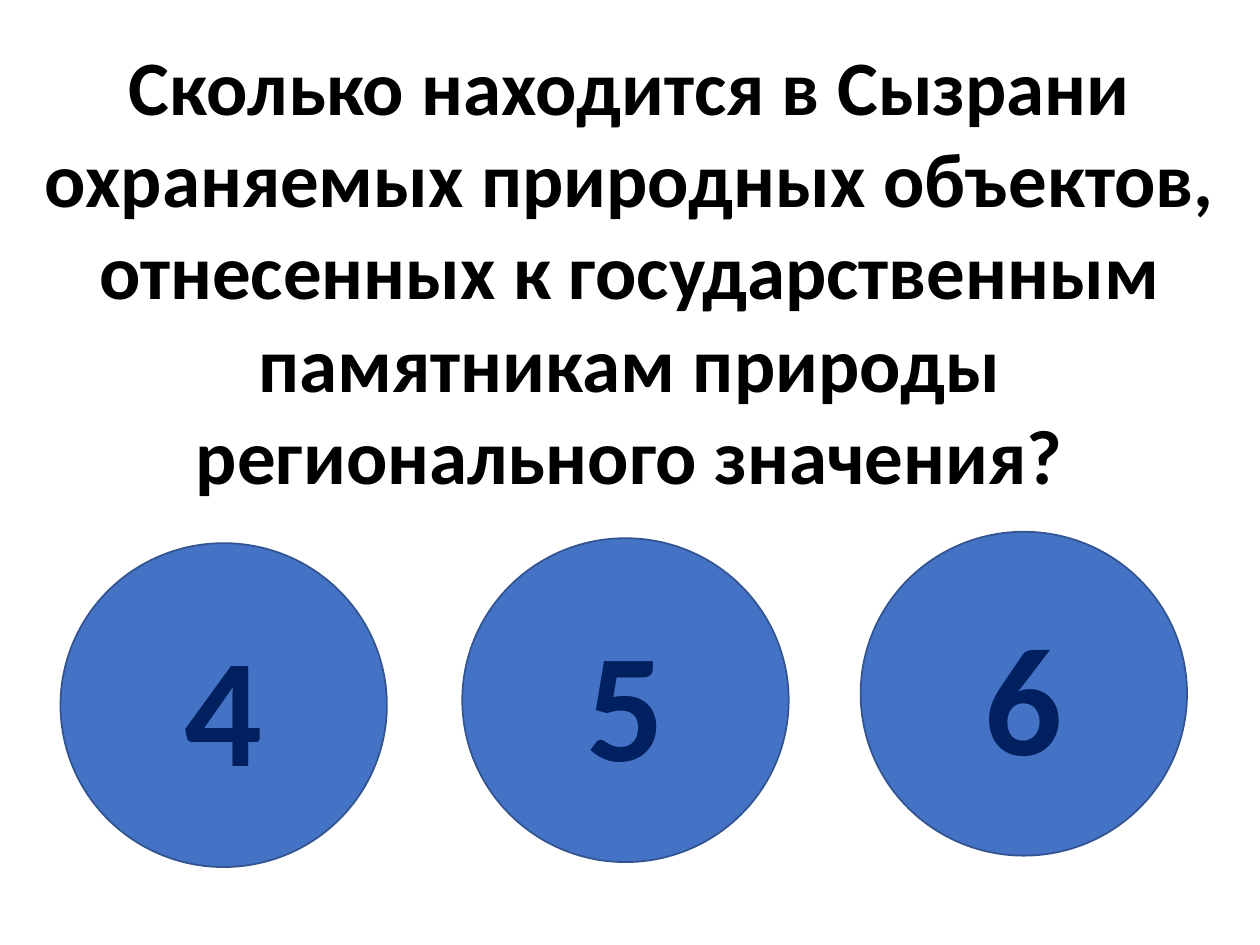
from pptx import Presentation
from pptx.dml.color import RGBColor
from pptx.enum.shapes import MSO_SHAPE as SHAPE
from pptx.enum.text import MSO_ANCHOR as ANCHOR, MSO_AUTO_SIZE as AUTO, PP_ALIGN as ALIGN
from pptx.util import Cm, Pt

QUESTION = ("Сколько находится в Сызрани охраняемых природных объектов, "
            "отнесенных к государственным памятникам природы "
            "регионального значения?")
ANSWERS = [("4", 1.22, 10.95), ("5", 9.32, 10.85), ("6", 17.35, 10.72)]
CIRCLE_W, CIRCLE_H = Cm(6.58), Cm(6.53)

BLACK = RGBColor(0x00, 0x00, 0x00)
NAVY = RGBColor(0x00, 0x20, 0x60)
BLUE = RGBColor(0x44, 0x72, 0xC4)
OUTLINE = RGBColor(0x32, 0x54, 0x91)

QUESTION_FONT = {"name": "Calibri", "size": Pt(44), "bold": True}
ANSWER_FONT = {**QUESTION_FONT, "size": Pt(88)}


def write(sp, text, font, color, anchor):
    tf = sp.text_frame
    tf.word_wrap = True
    tf.auto_size = AUTO.NONE
    tf.vertical_anchor = anchor
    p = tf.paragraphs[0]
    p.alignment = ALIGN.CENTER
    r = p.add_run()
    r.text = text
    for key, value in font.items():
        setattr(r.font, key, value)
    r.font.color.rgb = color


prs = Presentation()
prs.slide_width, prs.slide_height = Cm(25.4), Cm(19.05)
s = prs.slides.add_slide(prs.slide_layouts[5])

title = s.shapes.title
title.left, title.top = Cm(0), Cm(0.64)
title.width, title.height = prs.slide_width, Cm(9.65)
write(title, QUESTION, QUESTION_FONT, BLACK, ANCHOR.TOP)

for answer, left, top in ANSWERS:
    sp = s.shapes.add_shape(SHAPE.OVAL, Cm(left), Cm(top), CIRCLE_W, CIRCLE_H)
    sp.shadow.inherit = False
    sp.fill.solid()
    sp.fill.fore_color.rgb = BLUE
    sp.line.color.rgb = OUTLINE
    sp.line.width = Pt(1)
    write(sp, answer, ANSWER_FONT, NAVY, ANCHOR.MIDDLE)

prs.save("out.pptx")
